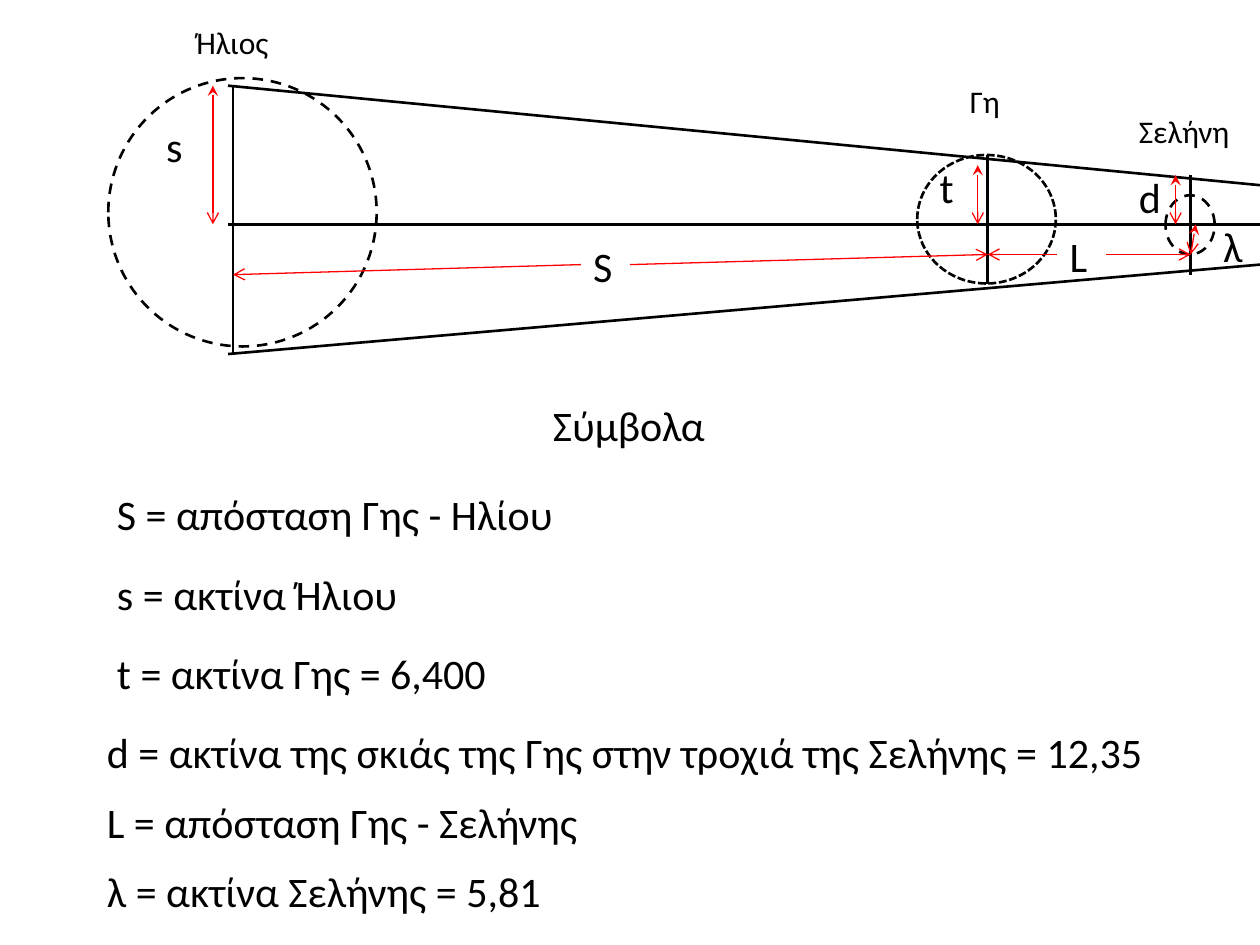
from lxml import etree
from pptx import Presentation
from pptx.dml.color import RGBColor
from pptx.enum import dml, shapes, text
from pptx.oxml import ns
from pptx.util import Inches, Pt

BLACK = RGBColor(0, 0, 0)
RED = RGBColor(255, 0, 0)

deck = Presentation()
deck.slide_width, deck.slide_height = Inches(10), Inches(7.5)
page = deck.slides.add_slide(deck.slide_layouts[6])


def add_line(start, end, color, width, head=None, tail=None):
    line = page.shapes.add_connector(
        shapes.MSO_CONNECTOR.STRAIGHT, *map(Inches, start + end))
    line.line.color.rgb = color
    line.line.width = Pt(width)
    outline = line.line._get_or_add_ln()
    for tag, kind in {"a:headEnd": head, "a:tailEnd": tail}.items():
        if kind:
            etree.SubElement(outline, ns.qn(tag), type=kind)
    etree.SubElement(line._element.spPr, ns.qn("a:effectLst"))


def add_text(words, left, top, width, size=24):
    box = page.shapes.add_textbox(
        *map(Inches, (left, top, width, 0.51 if size == 24 else 0.4)))
    frame = box.text_frame
    frame.word_wrap = True
    frame.auto_size = text.MSO_AUTO_SIZE.SHAPE_TO_FIT_TEXT
    span = frame.paragraphs[0].add_run()
    span.text = words
    for name, value in {"name": "Calibri", "size": Pt(size)}.items():
        setattr(span.font, name, value)
    span.font.color.rgb = BLACK


axis, span_level = 1.78, 2.02
sun_x, earth_x, moon_x = 1.85, 7.84, 9.45
sun_top, sun_bottom = 0.68, 2.81

for start, end in [
    ((1.81, sun_top), (10, 1.47)),
    ((1.81, sun_bottom), (10, 2.1)),
    ((1.81, axis), (10, axis)),
    ((sun_x, sun_top), (sun_x, sun_bottom)),
    ((earth_x, 1.23), (earth_x, 2.25)),
    ((moon_x, 1.39), (moon_x, 2.18)),
]:
    add_line(start, end, BLACK, 1.5)

for left, top, width, height, dash in [
    (0.86, 0.62, 2.13, 2.13, dml.MSO_LINE.DASH),
    (7.28, 1.23, 1.1, 1.02, dml.MSO_LINE.SQUARE_DOT),
    (9.25, 1.55, 0.39, 0.47, dml.MSO_LINE.DASH),
]:
    body = page.shapes.add_shape(
        shapes.MSO_SHAPE.OVAL, *map(Inches, (left, top, width, height)))
    body.shadow.inherit = False
    body.fill.background()
    body.line.color.rgb = BLACK
    body.line.width = Pt(1.5)
    body.line.dash_style = dash

for start, end in [
    ((4.61, 2.1), (sun_x, 2.18)),
    ((5, 2.1), (earth_x, span_level)),
    ((8.39, span_level), (earth_x, span_level)),
    ((8.78, span_level), (moon_x, span_level)),
]:
    add_line(start, end, RED, 0.75, tail="arrow")

for start, end in [
    ((1.69, sun_top), (1.69, axis)),
    ((7.76, 1.31), (7.76, axis)),
    ((9.33, 1.39), (9.33, axis)),
    ((9.49, axis), (moon_x, span_level)),
]:
    add_line(start, end, RED, 0.75, head="stealth", tail="arrow")

for symbol, left, top in [
    ("S", 4.61, 1.86),
    ("L", 8.39, 1.78),
    ("s", 1.22, 0.91),
    ("t", 7.36, 1.23),
    ("d", 8.94, 1.31),
    ("λ", 9.61, 1.7),
]:
    add_text(symbol, left, top, 0.39)

for name, left, top, width in [
    ("Ήλιος", 1.46, 0.13, 0.87),
    ("Γη", 7.6, 0.6, 0.47),
    ("Σελήνη", 8.94, 0.84, 1.06),
]:
    add_text(name, left, top, width, 18)

add_text("Σύμβολα", 4.29, 3.12, 1.5)
for meaning, left, top, width in [
    ("S = απόσταση Γης - Ηλίου", 0.83, 3.83, 3.86),
    ("s = ακτίνα Ήλιου", 0.83, 4.46, 3.07),
    ("t = ακτίνα Γης = 6,400", 0.83, 5.09, 4.02),
    ("d = ακτίνα της σκιάς της Γης στην τροχιά της Σελήνης = 12,35", 0.75, 5.72, 9.25),
    ("L = απόσταση Γης - Σελήνης", 0.75, 6.27, 6.46),
    ("λ = ακτίνα Σελήνης = 5,81", 0.75, 6.82, 4.88),
]:
    add_text(meaning, left, top, width)

deck.save("out.pptx")
